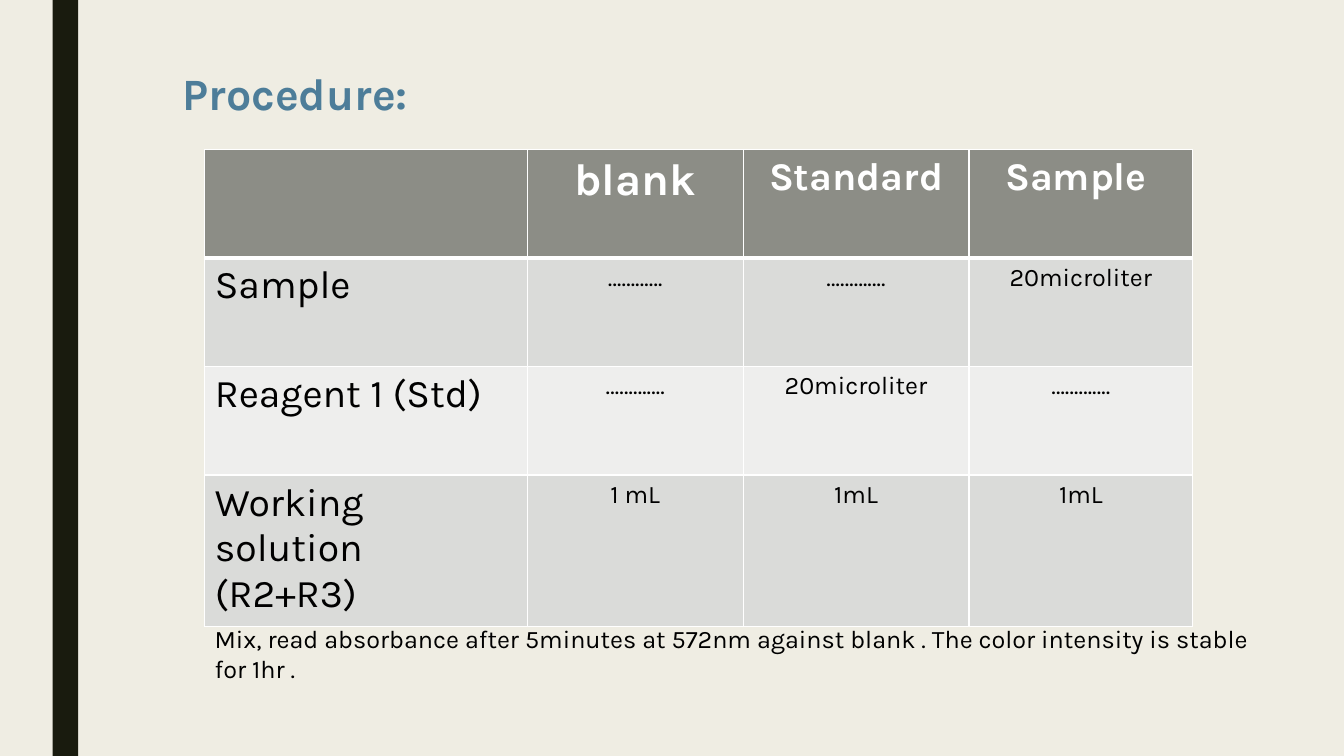
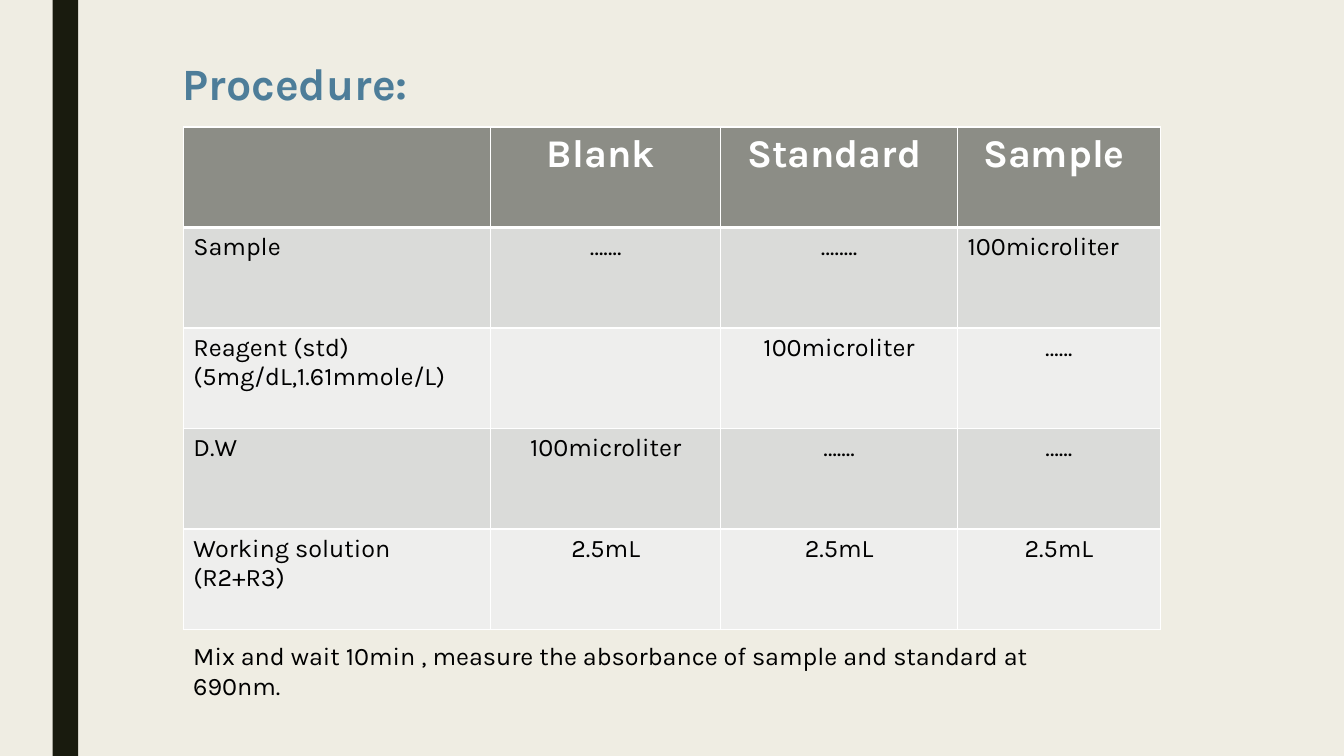
import pptx
import pptx.dml.color
import pptx.enum.shapes
import pptx.enum.text
import pptx.oxml
import pptx.oxml.ns
import pptx.util

Cm = pptx.util.Cm
Pt = pptx.util.Pt
ALIGN = pptx.enum.text.PP_ALIGN

COLORS = {
    "paper": "EFEDE3",
    "band": "191B0E",
    "title": "4D7D99",
    "header": "8C8D86",
    "odd_row": "DADBD9",
    "even_row": "EEEEED",
    "white": "FFFFFF",
    "ink": "000000",
}
FONT = "Karla"
SLIDE_WIDTH, SLIDE_HEIGHT = 33.87, 19.05
BODY_SIZE = 18
HEADER_SIZE = 28

PROCEDURES = [
    {
        "title_top": 1.65,
        "table_box": (5.16, 3.76, 24.9, 10.95),
        "column_shares": (3.2, 2.14, 2.24, 2.22),
        "label_size": 28,
        "sizes": {(0, 1): 32},
        "left_cells": set(),
        "rows": [
            ["", "blank", "Standard", "Sample "],
            ["Sample", "…………", "………….", "20microliter"],
            ["Reagent 1 (Std)", "………….", "20microliter", "…………."],
            ["Working solution\n(R2+R3)", "1 mL", "1mL", "1mL"],
        ],
        "note_box": (5.16, 15.57, 27.23, 1.02),
        "note": "Mix, read absorbance after 5minutes at 572nm against blank . "
                "The color intensity is stable for 1hr .",
    },
    {
        "title_top": 1.4,
        "table_box": (4.62, 3.2, 24.62, 12.67),
        "column_shares": (3.05, 2.28, 2.35, 2.01),
        "label_size": BODY_SIZE,
        "sizes": {},
        "left_cells": {(1, 3)},
        "rows": [
            ["", "Blank ", "Standard ", "Sample "],
            ["Sample", "…….", "……..", "100microliter"],
            ["Reagent (std)\n(5mg/dL,1.61mmole/L)", "", "100microliter", "……"],
            ["D.W", "100microliter", "…....", "…..."],
            ["Working solution\n(R2+R3)", "2.5mL", "2.5mL", "2.5mL"],
        ],
        "note_box": (4.62, 16, 23.14, 1.02),
        "note": "Mix and wait 10min , measure the absorbance of sample "
                "and standard at 690nm.",
    },
]


def rgb(name):
    return pptx.dml.color.RGBColor.from_string(COLORS[name])


def add_run(paragraph, text, size, color, bold=False):
    run = paragraph.add_run()
    run.text = text
    run.font.name = FONT
    run.font.size = Pt(size)
    run.font.bold = bold
    run.font.color.rgb = rgb(color)


def add_text(slide, box, text, size, color, bold=False):
    area = slide.shapes.add_textbox(*map(Cm, box))
    frame = area.text_frame
    frame.word_wrap = True
    frame.auto_size = pptx.enum.text.MSO_AUTO_SIZE.SHAPE_TO_FIT_TEXT
    add_run(frame.paragraphs[0], text, size, color, bold)
    return frame.paragraphs[0]


def add_band(slide):
    band = slide.shapes.add_shape(
        pptx.enum.shapes.MSO_SHAPE.RECTANGLE,
        Cm(1.33), 0, Cm(0.64), Cm(SLIDE_HEIGHT))
    band.shadow.inherit = False
    band.fill.solid()
    band.fill.fore_color.rgb = rgb("band")
    band.line.fill.background()


def add_title(slide, top):
    title = add_text(slide, (4.35, top, 26.67, 1.5), "Procedure:", 32, "title", True)
    title.line_spacing = 0.94
    title.space_before = Pt(10)
    title.space_after = Pt(2)


def set_borders(cell, bottom_width):
    properties = cell._tc.get_or_add_tcPr()
    for side, width in (("L", 1), ("R", 1), ("T", 1), ("B", bottom_width)):
        properties.append(pptx.oxml.parse_xml(
            f'<a:ln{side} {pptx.oxml.ns.nsdecls("a")} w="{Pt(width)}">'
            f'<a:solidFill><a:srgbClr val="{COLORS["white"]}"/></a:solidFill>'
            f'</a:ln{side}>'))


def fill_cell(cell, text, size, align, is_header, fill):
    set_borders(cell, 3 if is_header else 1)
    cell.fill.solid()
    cell.fill.fore_color.rgb = rgb(fill)
    frame = cell.text_frame
    for index, line in enumerate(text.split("\n") if text else []):
        paragraph = frame.add_paragraph() if index else frame.paragraphs[0]
        paragraph.alignment = align
        add_run(paragraph, line, size, "white" if is_header else "ink", is_header)


def add_procedure_table(slide, procedure):
    rows, shares = procedure["rows"], procedure["column_shares"]
    left, top, width, height = procedure["table_box"]
    table = slide.shapes.add_table(
        len(rows), len(shares), Cm(left), Cm(top), Cm(width), Cm(height)).table
    table.horz_banding = False
    for column, share in zip(table.columns, shares):
        column.width = Cm(width * share / sum(shares))
    for r, row in enumerate(rows):
        table.rows[r].height = Cm(height / len(rows))
        is_header = r == 0
        fill = "header" if is_header else "odd_row" if r % 2 else "even_row"
        for c, text in enumerate(row):
            is_label = c == 0
            size = (HEADER_SIZE if is_header
                    else procedure["label_size"] if is_label else BODY_SIZE)
            size = procedure["sizes"].get((r, c), size)
            is_left = is_label or (r, c) in procedure["left_cells"]
            align = ALIGN.LEFT if is_left else ALIGN.CENTER
            fill_cell(table.cell(r, c), text, size, align, is_header, fill)


def add_procedure_slide(deck, procedure):
    slide = deck.slides.add_slide(deck.slide_layouts[6])
    add_band(slide)
    add_title(slide, procedure["title_top"])
    add_procedure_table(slide, procedure)
    add_text(slide, procedure["note_box"], procedure["note"], BODY_SIZE, "ink")


def main():
    deck = pptx.Presentation()
    deck.slide_width = Cm(SLIDE_WIDTH)
    deck.slide_height = Cm(SLIDE_HEIGHT)
    backdrop = deck.slide_master.background.fill
    backdrop.solid()
    backdrop.fore_color.rgb = rgb("paper")
    for procedure in PROCEDURES:
        add_procedure_slide(deck, procedure)
    deck.save("out.pptx")


if __name__ == "__main__":
    main()
